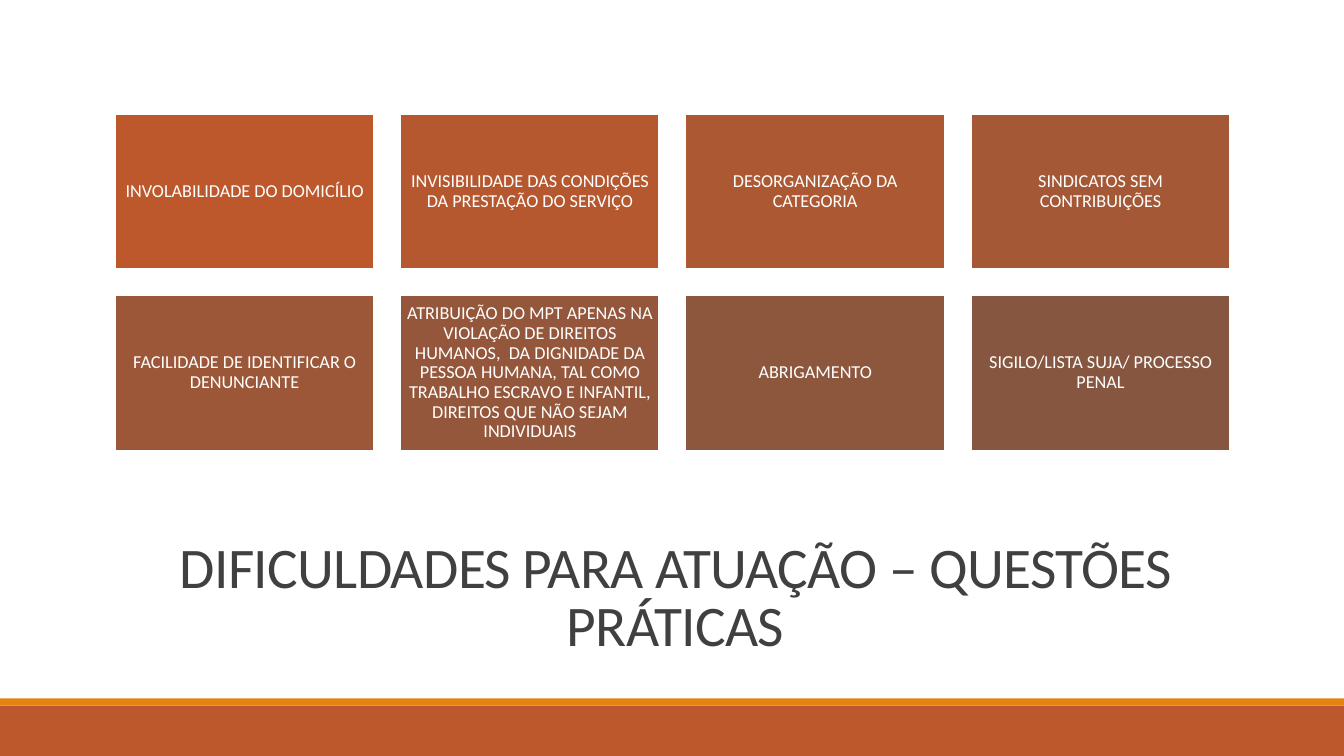
from pptx import Presentation
from pptx.dml.color import RGBColor
from pptx.enum.shapes import MSO_SHAPE as Shape
from pptx.enum.text import MSO_ANCHOR as Anchor, PP_ALIGN as Align
from pptx.util import Inches, Pt

COLORS = {
    "white": "FFFFFF",
    "title": "404040",
    "rust": "BD582C",
    "orange": "E48312",
}
DIFFICULTIES = [
    ("INVOLABILIDADE DO DOMICÍLIO", "BD582C"),
    ("INVISIBILIDADE DAS CONDIÇÕES DA PRESTAÇÃO DO SERVIÇO", "B5582F"),
    ("DESORGANIZAÇÃO DA CATEGORIA", "AC5833"),
    ("SINDICATOS SEM CONTRIBUIÇÕES", "A45836"),
    ("FACILIDADE DE IDENTIFICAR O DENUNCIANTE", "9C5739"),
    ("ATRIBUIÇÃO DO MPT APENAS NA VIOLAÇÃO DE DIREITOS HUMANOS,  DA DIGNIDADE "
     "DA PESSOA HUMANA, TAL COMO TRABALHO ESCRAVO E INFANTIL, DIREITOS QUE NÃO "
     "SEJAM INDIVIDUAIS", "95573B"),
    ("ABRIGAMENTO", "8D573E"),
    ("SIGILO/LISTA SUJA/ PROCESSO PENAL", "865640"),
]
COLUMNS = 4


def add_block(left, top, width, height, color):
    block = page.shapes.add_shape(
        Shape.RECTANGLE, Inches(left), Inches(top), Inches(width), Inches(height))
    block.shadow.inherit = False
    block.fill.solid()
    block.fill.fore_color.rgb = RGBColor.from_string(color)
    block.line.fill.background()
    return block


def write_text(frame, text, size, color, line_spacing):
    frame.word_wrap = True
    frame.vertical_anchor = Anchor.MIDDLE
    para = frame.paragraphs[0]
    para.text = text
    para.alignment = Align.CENTER
    para.line_spacing = line_spacing
    para.font.name = "Calibri"
    para.font.size = Pt(size)
    para.font.color.rgb = RGBColor.from_string(color)
    return para


deck = Presentation()
deck.slide_width = Inches(13.33)
deck.slide_height = Inches(7.5)
page = deck.slides.add_slide(deck.slide_layouts[6])

add_block(0, 7, 13.33, 0.5, COLORS["rust"])
add_block(0, 6.93, 13.33, 0.07, COLORS["orange"])

title = page.shapes.add_textbox(Inches(1.2), Inches(5.3), Inches(11), Inches(1.3))
para = write_text(title.text_frame, "DIFICULDADES PARA ATUAÇÃO – QUESTÕES PRÁTICAS",
                  41, COLORS["title"], 0.85)
para.runs[0].font._element.set("spc", "-50")

for index, (text, color) in enumerate(DIFFICULTIES):
    row, column = divmod(index, COLUMNS)
    card = add_block(1.14 + 2.83 * column, 1.13 + 1.8 * row, 2.57, 1.54, color)
    card.line.color.rgb = RGBColor.from_string(COLORS["white"])
    card.line.width = Pt(1.25)
    frame = card.text_frame
    frame.margin_left = frame.margin_right = Inches(0.05)
    frame.margin_top = frame.margin_bottom = Inches(0.05)
    write_text(frame, text, 13, COLORS["white"], 0.9)

deck.save("out.pptx")
